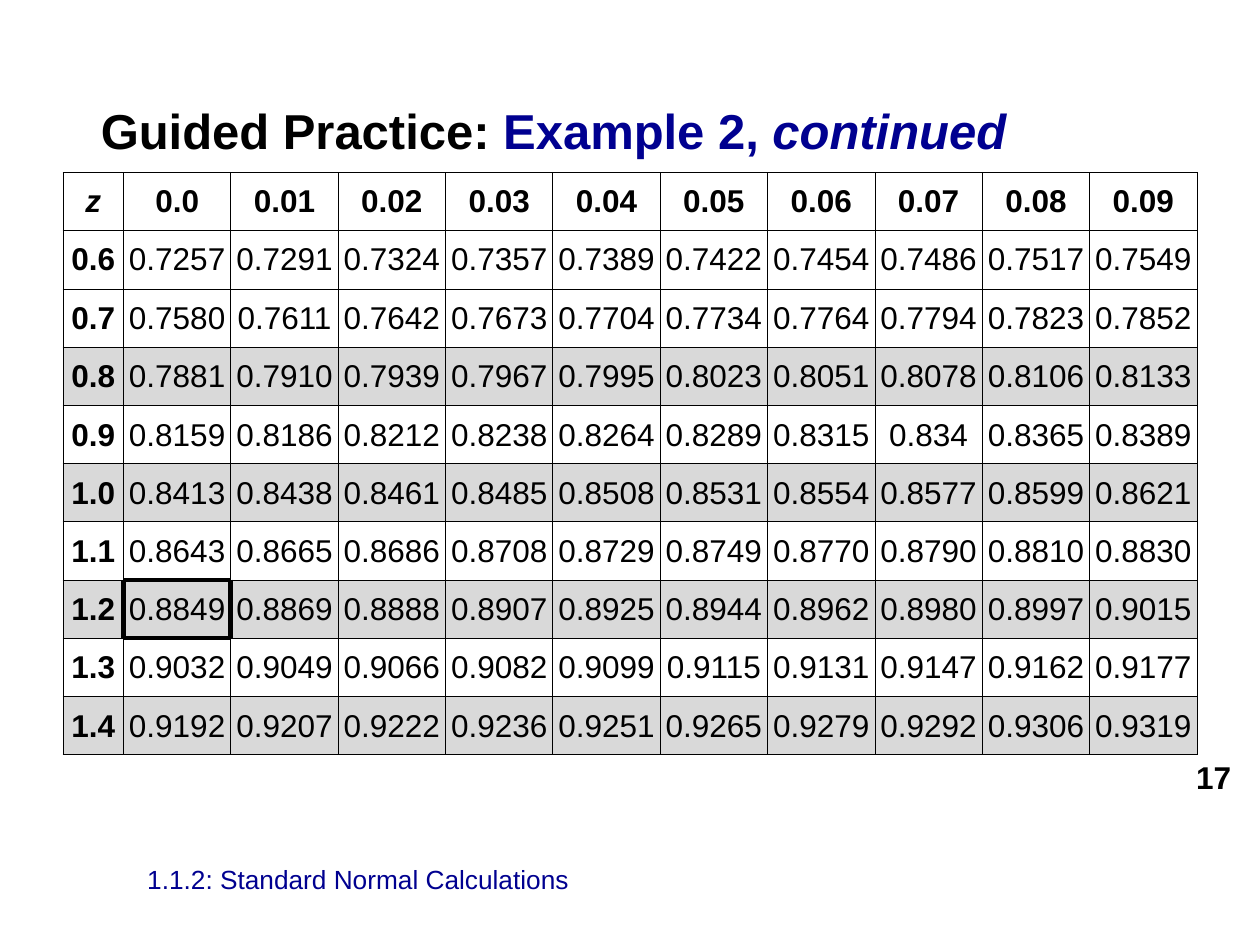
from lxml import etree
from pptx import Presentation
from pptx.dml.color import RGBColor
from pptx.enum import text
from pptx.oxml.ns import qn
from pptx.util import Inches, Pt

BLACK, NAVY, WHITE, GRAY = "000000", "000090", "FFFFFF", "D9D9D9"


def add_run(p, content, size=18, color=BLACK, bold=False, italic=False,
            align=text.PP_ALIGN.LEFT):
    p.alignment = align
    r = p.add_run()
    r.text = content
    r.font.name = "Arial"
    r.font.size = Pt(size)
    r.font.bold = bold
    r.font.italic = italic
    r.font.color.rgb = RGBColor.from_string(color)


def set_border(cell, side, width):
    ln = etree.SubElement(cell._tc.get_or_add_tcPr(), qn("a:ln" + side), w=str(Pt(width)))
    fill = etree.SubElement(ln, qn("a:solidFill"))
    etree.SubElement(fill, qn("a:srgbClr"), val=BLACK)


prs = Presentation()
prs.slide_width, prs.slide_height = Inches(10), Inches(7.5)
s = prs.slides.add_slide(prs.slide_layouts[5])

# Title
title = s.shapes.title
title.left, title.top = Inches(0.7), Inches(0.7)
title.width, title.height = Inches(8.72), Inches(5.47)
tf = title.text_frame
tf.word_wrap = True
tf.auto_size = text.MSO_AUTO_SIZE.NONE
tf.vertical_anchor = text.MSO_ANCHOR.TOP
tf.margin_top = Inches(0.1)
p = tf.paragraphs[0]
add_run(p, "Guided Practice: ", size=28, bold=True)
add_run(p, "Example 2, ", size=28, color=NAVY, bold=True)
add_run(p, "continued", size=28, color=NAVY, bold=True, italic=True)

# Page number and footer
for box, content, fmt in [
    ((9.07, 6.01, 0.8, 0.31), "17", dict(bold=True, align=text.PP_ALIGN.RIGHT)),
    ((1.07, 6.83, 6.28, 0.29), "1.1.2: Standard Normal Calculations",
     dict(size=15, color=NAVY)),
]:
    tf = s.shapes.add_textbox(*map(Inches, box)).text_frame
    tf.word_wrap = True
    tf.vertical_anchor = text.MSO_ANCHOR.MIDDLE
    tf.margin_top = tf.margin_bottom = 0
    add_run(tf.paragraphs[0], content, **fmt)

# Table of standard normal probabilities
rows = [line.split() for line in """
z 0.0 0.01 0.02 0.03 0.04 0.05 0.06 0.07 0.08 0.09
0.6 0.7257 0.7291 0.7324 0.7357 0.7389 0.7422 0.7454 0.7486 0.7517 0.7549
0.7 0.7580 0.7611 0.7642 0.7673 0.7704 0.7734 0.7764 0.7794 0.7823 0.7852
0.8 0.7881 0.7910 0.7939 0.7967 0.7995 0.8023 0.8051 0.8078 0.8106 0.8133
0.9 0.8159 0.8186 0.8212 0.8238 0.8264 0.8289 0.8315 0.834 0.8365 0.8389
1.0 0.8413 0.8438 0.8461 0.8485 0.8508 0.8531 0.8554 0.8577 0.8599 0.8621
1.1 0.8643 0.8665 0.8686 0.8708 0.8729 0.8749 0.8770 0.8790 0.8810 0.8830
1.2 0.8849 0.8869 0.8888 0.8907 0.8925 0.8944 0.8962 0.8980 0.8997 0.9015
1.3 0.9032 0.9049 0.9066 0.9082 0.9099 0.9115 0.9131 0.9147 0.9162 0.9177
1.4 0.9192 0.9207 0.9222 0.9236 0.9251 0.9265 0.9279 0.9292 0.9306 0.9319
""".strip().splitlines()]
shaded_rows = {3, 5, 7, 9}
answer = (7, 1)
width, height, first_col = 9, 4.62, 0.48
sides = {"L": (0, -1), "R": (0, 1), "T": (-1, 0), "B": (1, 0)}

table = s.shapes.add_table(len(rows), len(rows[0]), Inches(0.5), Inches(1.37),
                           Inches(width), Inches(height)).table
table.first_row = table.horz_banding = False
for i, col in enumerate(table.columns):
    col.width = Inches(first_col if i == 0 else (width - first_col) / (len(rows[0]) - 1))
for row in table.rows:
    row.height = Inches(height / len(rows))

for i, values in enumerate(rows):
    for j, value in enumerate(values):
        cell = table.cell(i, j)
        cell.vertical_anchor = text.MSO_ANCHOR.MIDDLE
        cell.margin_left = cell.margin_right = Inches(0.01)
        cell.margin_top = Inches(0.01 if i > 1 else 0)
        cell.margin_bottom = 0
        # The answer cell and the edges that touch it are heavy
        for side, (di, dj) in sides.items():
            heavy = answer in ((i, j), (i + di, j + dj))
            set_border(cell, side, 3 if heavy else 0.5)
        cell.fill.solid()
        cell.fill.fore_color.rgb = RGBColor.from_string(GRAY if i in shaded_rows else WHITE)
        add_run(cell.text_frame.paragraphs[0], value, bold=i == 0 or j == 0,
                italic=value == "z", align=text.PP_ALIGN.CENTER)

prs.save("out.pptx")
